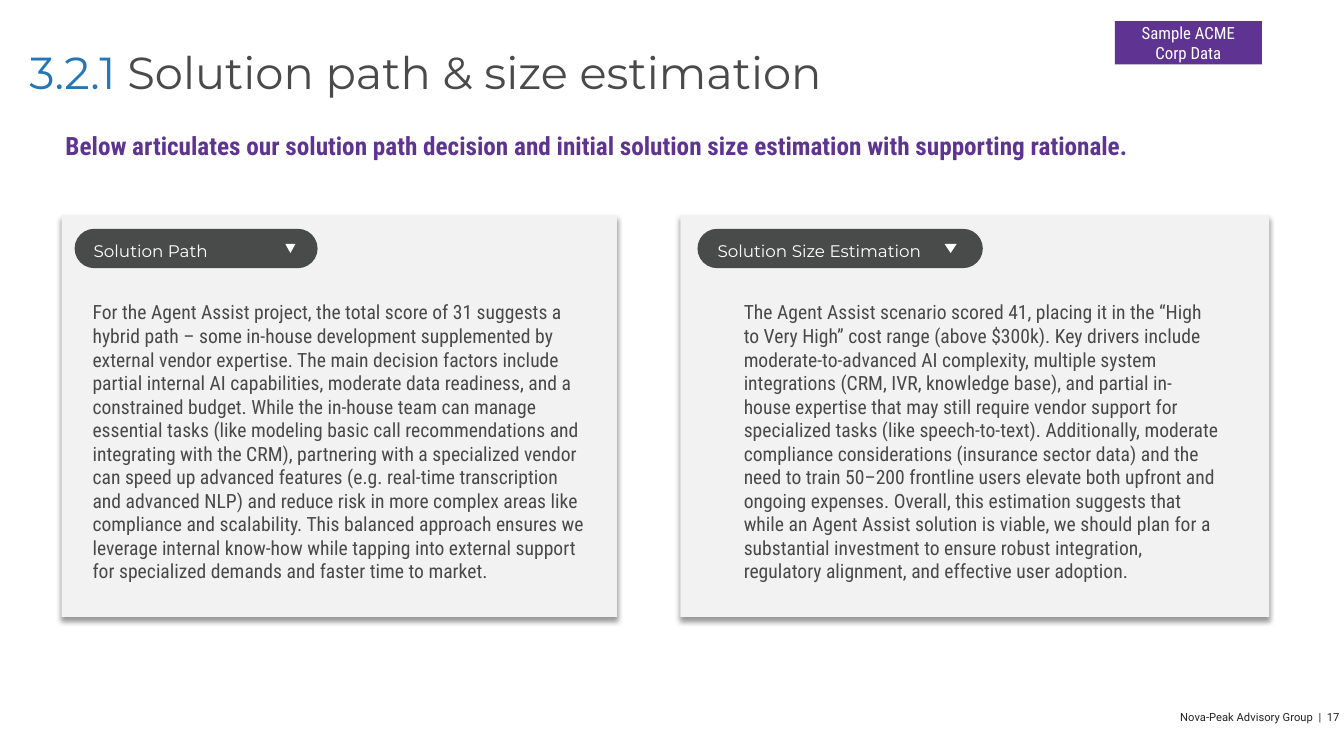
"""Builds the solution path and size estimation slide."""
from lxml import etree
from pptx import Presentation
from pptx import util as u
from pptx.dml.color import RGBColor
from pptx.enum import shapes, text
from pptx.oxml import ns

WIDTH, HEIGHT = u.Inches(13.333), u.Inches(7.5)
PURPLE = RGBColor(0x5E, 0x33, 0x91)
BLUE = RGBColor(0x25, 0x76, 0xB7)
TITLE_GRAY = RGBColor(0x4A, 0x4A, 0x4A)
BODY_GRAY = RGBColor(0x49, 0x49, 0x49)
PILL_GRAY = RGBColor(0x49, 0x4A, 0x4A)
PANEL_GRAY = RGBColor(0xF2, 0xF2, 0xF2)
FOOTER_GRAY = RGBColor(0x24, 0x24, 0x24)
SHADOW = RGBColor(0, 0, 0)
WHITE = RGBColor(0xFF, 0xFF, 0xFF)
BODY_FONT, HEADING_FONT, FOOTER_FONT = "Roboto Condensed", "Montserrat", "Roboto"

PANELS = [
    dict(
        left=4.58, width=41.33, pill=(0.97, 18.08), label=(1.65, 10.88),
        arrow=(16.65, 0.75), body=(1.57, 38.25), heading="Solution Path",
        rationale="For the Agent Assist project, the total score of 31 suggests a hybrid path – "
        "some in-house development supplemented by external vendor expertise. The main decision "
        "factors include partial internal AI capabilities, moderate data readiness, and a "
        "constrained budget. While the in-house team can manage essential tasks (like modeling "
        "basic call recommendations and integrating with the CRM), partnering with a specialized "
        "vendor can speed up advanced features (e.g. real-time transcription and advanced NLP) "
        "and reduce risk in more complex areas like compliance and scalability. This balanced "
        "approach ensures we leverage internal know-how while tapping into external support for "
        "specialized demands and faster time to market.",
    ),
    dict(
        left=50.63, width=43.8, pill=(1.27, 21.23), label=(2.02, 17.33),
        arrow=(19.65, 0.9), body=(3.97, 36.83), heading="Solution Size Estimation",
        rationale="The Agent Assist scenario scored 41, placing it in the “High to Very High” "
        "cost range (above $300k). Key drivers include moderate-to-advanced AI complexity, "
        "multiple system integrations (CRM, IVR, knowledge base), and partial in-house expertise "
        "that may still require vendor support for specialized tasks (like speech-to-text). "
        "Additionally, moderate compliance considerations (insurance sector data) and the need "
        "to train 50–200 frontline users elevate both upfront and ongoing expenses. Overall, "
        "this estimation suggests that while an Agent Assist solution is viable, we should plan "
        "for a substantial investment to ensure robust integration, regulatory alignment, and "
        "effective user adoption.",
    ),
]


def place(left, top, width, height):
    """Turn percentages of the slide into a position and size."""
    return [round(share * side / 100)
            for share, side in zip((left, top, width, height), (WIDTH, HEIGHT) * 2)]


def set_font(font, name, size, color, bold=False):
    """Set the face, size, colour and weight of a font."""
    font.name, font.size, font.bold = name, u.Pt(size), bold
    font.color.rgb = color


def add_shape(slide, kind, box, fill):
    """Add a flat shape without outline."""
    shape = slide.shapes.add_shape(kind, *place(*box))
    shape.shadow.inherit = False
    shape.fill.solid()
    shape.fill.fore_color.rgb = fill
    shape.line.fill.background()
    return shape


def add_text(slide, box, words, name, size, color, bold=False, wrap=True, margins=None):
    """Add a text box of one paragraph and return its frame and paragraph."""
    frame = slide.shapes.add_textbox(*place(*box)).text_frame
    frame.word_wrap = wrap
    if margins is not None:
        frame.margin_left = frame.margin_top = frame.margin_bottom = 0
        frame.margin_right = u.Inches(margins)
    paragraph = frame.paragraphs[0]
    paragraph.text = words
    set_font(paragraph.font, name, size, color, bold)
    return frame, paragraph


def add_drop_shadow(shape):
    """Give a shape a soft shadow below it."""
    effects = shape._element.spPr.find(ns.qn("a:effectLst"))
    shadow = etree.SubElement(effects, ns.qn("a:outerShdw"), blurRad=str(u.Pt(4)),
                              dist=str(u.Pt(3)), dir="5400000", algn="t", rotWithShape="0")
    color = etree.SubElement(shadow, ns.qn("a:srgbClr"), val=str(SHADOW))
    etree.SubElement(color, ns.qn("a:alpha"), val="40000")


def add_panel(slide, left, width, pill, label, arrow, body, heading, rationale):
    """Add a shaded panel with a pill heading and its rationale."""
    def inside(span, top, height):
        """Place a span measured from the panel's left side."""
        return left + span[0], top, span[1], height

    kinds = shapes.MSO_SHAPE
    panel = add_shape(slide, kinds.RECTANGLE, (left, 28.4, width, 53.2), PANEL_GRAY)
    add_drop_shadow(panel)
    capsule = add_shape(slide, kinds.ROUNDED_RECTANGLE, inside(pill, 30.27, 5.2), PILL_GRAY)
    capsule.adjustments[0] = 0.5
    frame, paragraph = add_text(slide, inside(label, 30.93, 4.13), heading,
                                HEADING_FONT, 12, WHITE, wrap=False)
    frame.vertical_anchor = text.MSO_ANCHOR.MIDDLE
    paragraph.line_spacing = 1.1
    triangle = add_shape(slide, kinds.ISOSCELES_TRIANGLE, inside(arrow, 32.27, 1.2), WHITE)
    triangle.rotation = 180
    add_text(slide, inside(body, 39.07, 39.07), rationale, BODY_FONT, 14, BODY_GRAY)


def add_title(slide, number, words):
    """Add the title with its section number in blue."""
    paragraph = add_text(slide, (2.18, 6.67, 71.78, 7.87), "", HEADING_FONT, 32,
                         TITLE_GRAY, margins=0)[1]
    paragraph.line_spacing = 0.9
    for part, color in ((number, BLUE), (words, TITLE_GRAY)):
        run = paragraph.add_run()
        run.text = part
        set_font(run.font, HEADING_FONT, 32, color)


def add_tag(slide, words):
    """Add the purple tag in the top right corner."""
    tag = add_shape(slide, shapes.MSO_SHAPE.RECTANGLE, (82.95, 2.8, 10.95, 5.73), PURPLE)
    tag.text_frame.vertical_anchor = text.MSO_ANCHOR.MIDDLE
    paragraph = tag.text_frame.paragraphs[0]
    paragraph.text = words
    paragraph.alignment = text.PP_ALIGN.CENTER
    set_font(paragraph.font, BODY_FONT, 12, WHITE)


def main():
    """Build and save the slide."""
    presentation = Presentation()
    presentation.slide_width, presentation.slide_height = WIDTH, HEIGHT
    slide = presentation.slides.add_slide(presentation.slide_layouts[6])
    footer = add_text(slide, (72.23, 94, 28.2, 1.73), "Nova-Peak Advisory Group  |  17",
                      FOOTER_FONT, 8, FOOTER_GRAY, margins=0.1)[1]
    footer.alignment = text.PP_ALIGN.RIGHT
    add_tag(slide, "Sample ACME Corp Data")
    add_title(slide, "3.2.1", " Solution path & size estimation")
    add_text(slide, (4.13, 16.53, 81.3, 5.33),
             "Below articulates our solution path decision and initial solution size "
             "estimation with supporting rationale.", BODY_FONT, 18, PURPLE, bold=True)
    for panel in PANELS:
        add_panel(slide, **panel)
    presentation.save("out.pptx")


if __name__ == "__main__":
    main()
